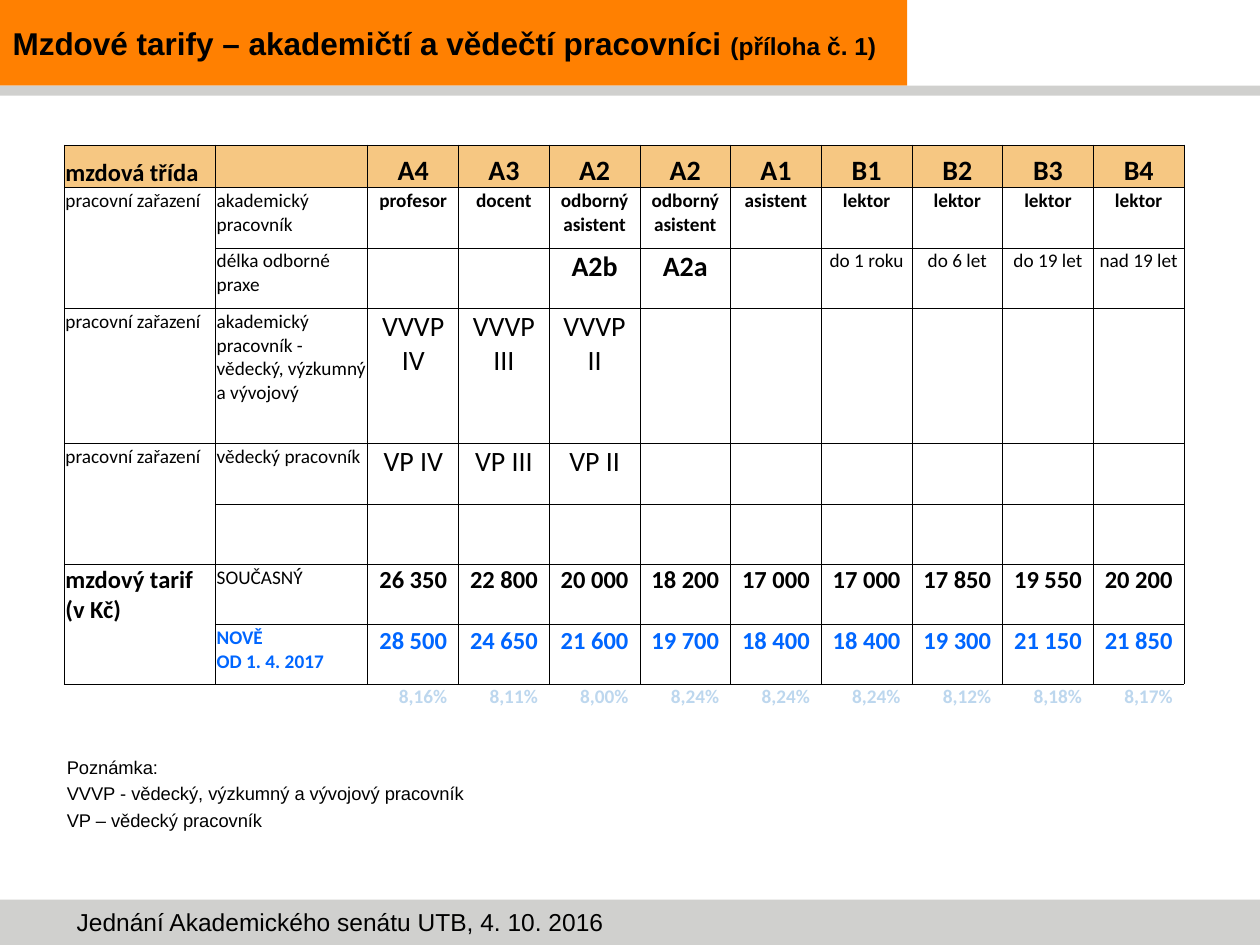
import pptx
import pptx.util
import pptx.dml.color
import pptx.enum.shapes
import pptx.enum.text
import pptx.oxml
import pptx.oxml.ns

Inches, Pt = pptx.util.Inches, pptx.util.Pt
RGBColor = pptx.dml.color.RGBColor
ALIGN = pptx.enum.text.PP_ALIGN
ANCHOR = pptx.enum.text.MSO_ANCHOR

BLACK = RGBColor(0, 0, 0)
ORANGE = RGBColor(0xFF, 0x80, 0x01)
GRAY = RGBColor(0xD0, 0xD0, 0xCE)
SAND = RGBColor(0xF6, 0xC7, 0x82)
BLUE = RGBColor(0x00, 0x66, 0xFF)
PALE_BLUE = RGBColor(0xBD, 0xD7, 0xEE)

TITLE = "Mzdové tarify – akademičtí a vědečtí pracovníci "
TITLE_NOTE = "(příloha č. 1)"
FOOTER = "Jednání Akademického senátu UTB, 4. 10. 2016"
NOTES = ["Poznámka:", "VVVP - vědecký, výzkumný a vývojový pracovník", "VP – vědecký pracovník"]
BARS = [(0, 0, 7.2, 0.68, ORANGE), (0, 7.14, 10, 0.36, GRAY), (0, 0.68, 10, 0.08, GRAY)]

LABEL = dict(size=11)
BOLD_LABEL = dict(size=11, bold=True)
HEAD = dict(size=14, bold=True)
CODE = dict(size=16)
BOLD_CODE = dict(size=16, bold=True)
NEW_LABEL = dict(size=11, bold=True, color=BLUE)
NEW_RATE = dict(size=14, bold=True, color=BLUE)
RISE = dict(size=11, bold=True, color=PALE_BLUE)

COL_WIDTHS = [1.2, 1.21] + [0.72] * 9
ROWS = [
    (0.34, "mzdová třída", HEAD, "", LABEL,
     ["A4", "A3", "A2", "A2", "A1", "B1", "B2", "B3", "B4"], BOLD_CODE),
    (0.48, "pracovní zařazení", LABEL, "akademický pracovník", LABEL,
     ["profesor", "docent", "odborný asistent", "odborný asistent", "asistent"] + ["lektor"] * 4,
     BOLD_LABEL),
    (0.48, "", LABEL, "délka odborné praxe", LABEL,
     ["", "", "A2b", "A2a", "", "do 1 roku", "do 6 let", "do 19 let", "nad 19 let"], LABEL),
    (1.07, "pracovní zařazení", LABEL, "akademický pracovník - vědecký, výzkumný a vývojový", LABEL,
     ["VVVP\nIV", "VVVP\nIII", "VVVP\nII"] + [""] * 6, CODE),
    (0.48, "pracovní zařazení", LABEL, "vědecký pracovník", LABEL,
     ["VP IV", "VP III", "VP II"] + [""] * 6, CODE),
    (0.48, "", LABEL, "", LABEL, [""] * 9, LABEL),
    (0.48, "mzdový tarif (v Kč)", HEAD, "SOUČASNÝ", LABEL,
     ["26 350", "22 800", "20 000", "18 200", "17 000", "17 000", "17 850", "19 550", "20 200"], HEAD),
    (0.47, "", LABEL, "NOVĚ\nOD 1. 4. 2017", NEW_LABEL,
     ["28 500", "24 650", "21 600", "19 700", "18 400", "18 400", "19 300", "21 150", "21 850"], NEW_RATE),
    (0.48, "", LABEL, "", LABEL,
     ["8,16%", "8,11%", "8,00%", "8,24%", "8,24%", "8,24%", "8,12%", "8,18%", "8,17%"], RISE),
]
RISE_ROW = len(ROWS) - 1
MERGED_PAIRS = [1, 4, 6]


def add_text(p, text, size=11, bold=False, color=BLACK, font="Calibri", align=ALIGN.LEFT):
    p.alignment = align
    for i, line in enumerate(text.split("\n")):
        if i:
            p.add_line_break()
        r = p.add_run()
        r.text = line
        r.font.size, r.font.bold, r.font.name = Pt(size), bold, font
        r.font.color.rgb = color


def set_borders(cell, sides):
    tcPr = cell._tc.get_or_add_tcPr()
    for side in "LRTB":
        fill = '<a:solidFill><a:srgbClr val="000000"/></a:solidFill>' if side in sides else "<a:noFill/>"
        tcPr.append(pptx.oxml.parse_xml(
            f'<a:ln{side} {pptx.oxml.ns.nsdecls("a")} w="{Pt(0.5)}">{fill}</a:ln{side}>'))


def place(sp, left, top, width, height):
    sp.left, sp.top, sp.width, sp.height = (Inches(v) for v in (left, top, width, height))


def build_table(s):
    heights = [row[0] for row in ROWS]
    tbl = s.shapes.add_table(len(ROWS), len(COL_WIDTHS), Inches(0.51), Inches(1.15),
                             Inches(sum(COL_WIDTHS)), Inches(sum(heights))).table
    tbl.first_row = tbl.horz_banding = False
    for col, width in zip(tbl.columns, COL_WIDTHS):
        col.width = Inches(width)
    for i, (height, group, group_fmt, label, label_fmt, values, value_fmt) in enumerate(ROWS):
        tbl.rows[i].height = Inches(height)
        for j, text in enumerate([group, label] + values):
            cell = tbl.cell(i, j)
            is_rise = i == RISE_ROW
            cell.margin_left = cell.margin_top = Inches(0.01)
            cell.margin_right = Inches(0.09 if is_rise and j > 1 else 0.01)
            cell.margin_bottom = 0
            cell.vertical_anchor = ANCHOR.TOP if i else ANCHOR.BOTTOM
            set_borders(cell, "T" if is_rise else "LRTB")
            if i:
                cell.fill.background()
            else:
                cell.fill.solid()
                cell.fill.fore_color.rgb = SAND
            if text:
                fmt = (group_fmt, label_fmt, value_fmt)[min(j, 2)]
                if text in ("A2a", "A2b"):
                    fmt = BOLD_CODE
                align = ALIGN.LEFT if j < 2 else ALIGN.RIGHT if is_rise else ALIGN.CENTER
                add_text(cell.text_frame.paragraphs[0], text, align=align, **fmt)
    for i in MERGED_PAIRS:
        tbl.cell(i, 0).merge(tbl.cell(i + 1, 0))


def main():
    prs = pptx.Presentation()
    prs.slide_width, prs.slide_height = Inches(10), Inches(7.5)
    s = prs.slides.add_slide(prs.slide_layouts[1])
    title, body = s.shapes.title, s.placeholders[1]

    for *box, color in BARS:
        sp = s.shapes.add_shape(pptx.enum.shapes.MSO_SHAPE.RECTANGLE, *(Inches(v) for v in box))
        sp.shadow.inherit = False
        sp.fill.solid()
        sp.fill.fore_color.rgb = color
        sp.line.fill.background()
        title._element.addprevious(sp._element)

    place(title, 0, 0, 7.2, 0.68)
    tf = title.text_frame
    tf.auto_size = pptx.enum.text.MSO_AUTO_SIZE.NONE
    tf.vertical_anchor = ANCHOR.MIDDLE
    p = tf.paragraphs[0]
    add_text(p, TITLE, size=18, bold=True, font="Arial")
    add_text(p, TITLE_NOTE, size=14, bold=True, font="Arial")

    place(body, 0.43, 5.95, 9.29, 1.02)
    tf = body.text_frame
    tf.auto_size = pptx.enum.text.MSO_AUTO_SIZE.NONE
    for i, note in enumerate(NOTES):
        p = tf.add_paragraph() if i else tf.paragraphs[0]
        pPr = p._p.get_or_add_pPr()
        pPr.set("marL", "0")
        pPr.set("indent", "0")
        pPr.append(pptx.oxml.parse_xml(f'<a:buNone {pptx.oxml.ns.nsdecls("a")}/>'))
        p.space_before = Pt(2.5 if i else 0)
        add_text(p, note, size=10.5, font="Arial")

    build_table(s)

    footer = s.shapes.add_textbox(Inches(0.51), Inches(7.15), Inches(9.21), Inches(0.34))
    footer.text_frame.word_wrap = True
    add_text(footer.text_frame.paragraphs[0], FOOTER, size=14, font="Arial")
    prs.save("out.pptx")


if __name__ == "__main__":
    main()
